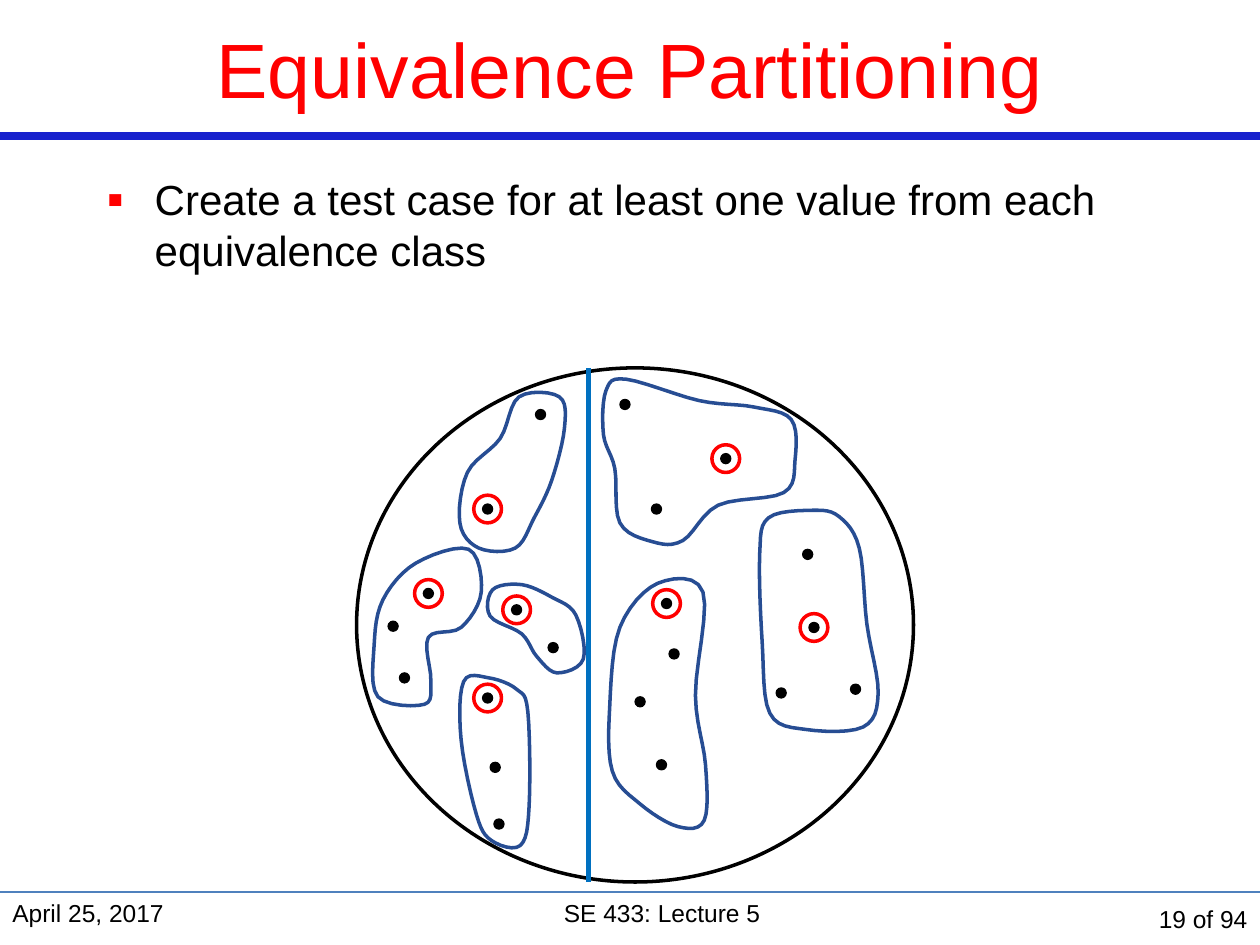
from lxml import etree
from pptx import Presentation
from pptx import util as u
from pptx.dml.color import RGBColor
from pptx.enum import shapes, text
from pptx.oxml.ns import qn

BLACK, RED, NAVY, BLUE = "000000", "FF0000", "274D93", "0070C0"

CLASSES = [
    {"outline": [(2.44, 1.15), (2.12, 1.15), (1.97, 1.48), (1.71, 1.75), (1.65, 2.15), (1.8, 2.35),
                 (2.09, 2.35), (2.24, 2.11), (2.38, 1.81), (2.48, 1.4)],
     "values": [(2.29, 1.29)], "chosen": (1.87, 2.04)},
    {"outline": [(1.72, 2.36), (1.3, 2.47), (1.04, 2.76), (0.97, 3.12), (1, 3.53), (1.37, 3.59),
                 (1.42, 3.4), (1.4, 3.06), (1.66, 2.98), (1.82, 2.7)],
     "values": [(1.12, 2.97), (1.21, 3.38)], "chosen": (1.4, 2.71)},
    {"outline": [(1.88, 3.38), (1.68, 3.41), (1.66, 3.87), (1.78, 4.46), (1.9, 4.67),
                 (2.13, 4.71), (2.2, 4.4), (2.19, 3.65), (2.1, 3.47)],
     "values": [(1.93, 4.09), (1.96, 4.54)], "chosen": (1.87, 3.54)},
    {"outline": [(3.22, 2.63), (2.92, 2.98), (2.84, 3.6), (2.86, 4.12), (3.08, 4.38), (3.38, 4.56),
                 (3.59, 4.51), (3.6, 4.07), (3.52, 3.52), (3.58, 2.7)],
     "values": [(3.35, 3.19), (3.08, 3.57), (3.25, 4.07)], "chosen": (3.29, 2.79)},
    {"outline": [(2.97, 1.01), (2.81, 1.1), (2.79, 1.45), (2.88, 1.72), (2.92, 2.15), (3.18, 2.3),
                 (3.42, 2.29), (3.7, 2.01), (4.22, 1.91), (4.31, 1.65), (4.28, 1.33),
                 (3.98, 1.23), (3.55, 1.18)],
     "values": [(2.96, 1.21), (3.21, 2.04)], "chosen": (3.76, 1.64)},
    {"outline": [(2.42, 3.34), (2.63, 3.23), (2.57, 2.88), (2.38, 2.74), (2.14, 2.64), (1.91, 2.68),
                 (1.89, 2.89), (2.14, 3.03), (2.26, 3.21)],
     "values": [(2.39, 3.14)], "chosen": (2.1, 2.84)},
    {"outline": [(4.45, 2.05), (4.1, 2.11), (4.03, 2.4), (4.05, 3.1), (4.11, 3.66), (4.4, 3.79),
                 (4.85, 3.77), (4.97, 3.5), (4.88, 2.95), (4.82, 2.35), (4.66, 2.1)],
     "values": [(4.41, 2.4), (4.2, 3.5), (4.79, 3.47)], "chosen": (4.46, 2.98)},
]


def rgb(color):
    """Turn a hex string into a colour."""
    return RGBColor.from_string(color)


def style(sp, line, width, fill=None):
    """Set the line and fill of a shape and drop its shadow."""
    sp.shadow.inherit = False
    sp.line.color.rgb = rgb(line)
    sp.line.width = u.Pt(width)
    if fill:
        sp.fill.solid()
        sp.fill.fore_color.rgb = rgb(fill)
    else:
        sp.fill.background()


def add_line(s, x1, y1, x2, y2, color, width):
    """Draw a straight line without shadow."""
    c = s.shapes.add_connector(shapes.MSO_CONNECTOR.STRAIGHT, *map(u.Inches, (x1, y1, x2, y2)))
    c.line.color.rgb = rgb(color)
    c.line.width = u.Pt(width)
    etree.SubElement(c._element.spPr, qn("a:effectLst"))


def add_oval(s, cx, cy, w, h, *look):
    """Draw an ellipse around a centre."""
    box = map(u.Inches, (cx - w / 2, cy - h / 2, w, h))
    style(s.shapes.add_shape(shapes.MSO_SHAPE.OVAL, *box), *look)


def smooth(pts, steps=6):
    """Return a closed curve that runs through the given points."""
    curve = []
    for i in range(len(pts)):
        quad = [pts[(i + k) % len(pts)] for k in (-1, 0, 1, 2)]
        for t in (n / steps for n in range(steps)):
            curve.append(tuple(
                b + t * (c - a) / 2 + t * t * (2 * a - 5 * b + 4 * c - d) / 2
                + t ** 3 * (3 * b - a - 3 * c + d) / 2
                for a, b, c, d in zip(*quad)))
    return curve


def write(tf, words, size, color, align, anchor=text.MSO_ANCHOR.TOP):
    """Fill a text frame with one formatted paragraph and return it."""
    tf.word_wrap = True
    tf.vertical_anchor = anchor
    p = tf.paragraphs[0]
    p.text = words
    p.alignment = align
    font = p.runs[0].font
    font.name, font.size, font.color.rgb = "Arial", u.Pt(size), rgb(color)
    return p


def add_text(s, box, *args):
    """Add a text box with one paragraph and return the paragraph."""
    return write(s.shapes.add_textbox(*map(u.Inches, box)).text_frame, *args)


def header(s, x, y, w, h):
    """Place the title and the rule below it."""
    sp = s.shapes.title
    sp.left, sp.top, sp.width, sp.height = map(u.Inches, (x, y, w, h))
    write(sp.text_frame, "Equivalence Partitioning", 44, RED,
          text.PP_ALIGN.CENTER, text.MSO_ANCHOR.MIDDLE)
    add_line(s, x, y + h, x + w, y + h, "1822CD", 4.5)


def body(s, *box):
    """Place the bulleted statement."""
    p = add_text(s, box, "Create a test case for at least one value from each equivalence class",
                 24, BLACK, text.PP_ALIGN.LEFT)
    p.space_before = u.Pt(4.8)
    pPr = p._p.get_or_add_pPr()
    pPr.set("marL", str(u.Inches(0.38)))
    pPr.set("indent", str(-u.Inches(0.38)))
    clr = etree.SubElement(pPr, qn("a:buClr"))
    etree.SubElement(clr, qn("a:srgbClr"), val=RED)
    etree.SubElement(pPr, qn("a:buSzPct"), val="114000")
    etree.SubElement(pPr, qn("a:buFont"), typeface="Arial")
    etree.SubElement(pPr, qn("a:buChar"), char="▪")


def diagram(s, x, y):
    """Draw the input domain, its classes and the values chosen."""
    add_oval(s, x + 3.04, y + 2.96, 4.42, 4.08, BLACK, 2)
    add_line(s, x + 2.67, y + 0.92, x + 2.67, y + 5, BLUE, 3)
    for group in CLASSES:
        pts = [(u.Inches(x + px), u.Inches(y + py)) for px, py in smooth(group["outline"])]
        fb = s.shapes.build_freeform(*pts[0])
        fb.add_line_segments(pts[1:], close=True)
        style(fb.convert_to_shape(), NAVY, 2)
        cx, cy = group["chosen"]
        for vx, vy in [*group["values"], (cx, cy)]:
            add_oval(s, x + vx, y + vy, 0.08, 0.08, BLACK, 0.75, BLACK)
        add_oval(s, x + cx, y + cy, 0.22, 0.22, RED, 2)


def footer(s, x, y, w, h):
    """Place the thin rule, date, course and page number."""
    add_line(s, x, y, x + w, y, "4F81BD", 0.75)
    al, an = text.PP_ALIGN, text.MSO_ANCHOR
    for words, dx, width, align, anchor in [
            ("April 25, 2017", 0, 2.17, al.LEFT, an.TOP),
            ("SE 433: Lecture 5", 2.17, 6.17, al.CENTER, an.TOP),
            ("19 of 94", 8.33, 1.67, al.RIGHT, an.MIDDLE)]:
        add_text(s, (x + dx, y, width, h), words, 14, BLACK, align, anchor)


def main():
    """Build the slide and save it."""
    prs = Presentation()
    prs.slide_width, prs.slide_height = u.Inches(10), u.Inches(7.5)
    s = prs.slides.add_slide(prs.slide_layouts[5])
    header(s, 0, 0, 10, 1.08)
    body(s, 0.75, 1.33, 8.5, 0.92)
    diagram(s, 2, 2)
    footer(s, 0, 7.08, 10, 0.42)
    prs.save("out.pptx")


if __name__ == "__main__":
    main()
